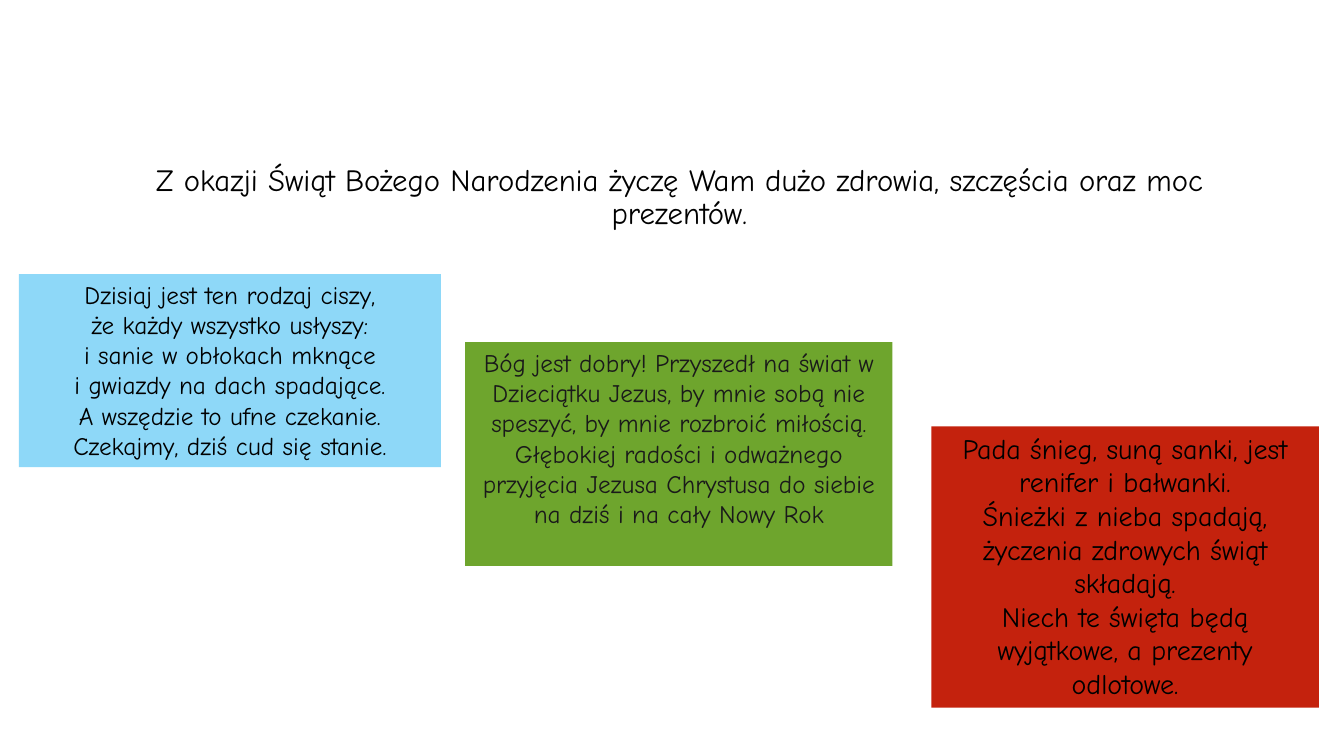
from pptx import Presentation
from pptx.dml.color import RGBColor
from pptx.enum.shapes import MSO_SHAPE
from pptx.enum.text import MSO_ANCHOR, MSO_AUTO_SIZE, PP_ALIGN
from pptx.util import Emu, Pt

EMU_PER_PX = 9525
FONT = "Comic Neue"
COLORS = {
    "black": "000000",
    "charcoal": "1A1A1A",
    "sky": "8ED8F8",
    "green": "6EA52D",
    "red": "C4220D",
}
GREETING = "Z okazji Świąt Bożego Narodzenia życzę Wam dużo zdrowia, szczęścia oraz moc prezentów."
SILENCE_POEM = [[
    "Dzisiaj jest ten rodzaj ciszy,",
    "że każdy wszystko usłyszy:",
    "i sanie w obłokach mknące",
    "i gwiazdy na dach spadające.",
    "A wszędzie to ufne czekanie.",
    "Czekajmy, dziś cud się stanie.",
]]
FAITH_WISH = [[
    "Bóg jest dobry! Przyszedł na świat w Dzieciątku Jezus, by mnie sobą nie speszyć, "
    "by mnie rozbroić miłością. Głębokiej radości i odważnego przyjęcia Jezusa Chrystusa "
    "do siebie na dziś i na cały Nowy Rok",
]]
SNOW_POEM = [
    ["Pada śnieg, suną sanki, jest renifer i bałwanki."],
    ["Śnieżki z nieba spadają, życzenia zdrowych świąt składają."],
    ["Niech te święta będą wyjątkowe, a prezenty odlotowe."],
]


def px(value):
    return Emu(value * EMU_PER_PX)


def rgb(name):
    return RGBColor.from_string(COLORS[name])


def write_text(tf, paragraphs, size, color):
    tf.word_wrap = True
    tf.auto_size = MSO_AUTO_SIZE.NONE
    tf.vertical_anchor = MSO_ANCHOR.TOP
    for i, lines in enumerate(paragraphs):
        p = tf.add_paragraph() if i else tf.paragraphs[0]
        p.alignment = PP_ALIGN.CENTER
        for j, line in enumerate(lines):
            if j:
                p.add_line_break()
            r = p.add_run()
            r.text = line
            r.font.name = FONT
            r.font.size = Pt(size)
            r.font.color.rgb = rgb(color)


def place_greeting(s):
    sp = s.shapes.title
    sp.left, sp.top, sp.width, sp.height = map(px, (75, 152, 1144, 101))
    write_text(sp.text_frame, [[GREETING]], 22, "black")
    p = sp.text_frame.paragraphs[0]
    p.line_spacing = 0.9
    p.space_before = Pt(0)


def add_card(s, box, fill, paragraphs, size, color="black"):
    sp = s.shapes.add_shape(MSO_SHAPE.RECTANGLE, *map(px, box))
    sp.shadow.inherit = False
    sp.fill.solid()
    sp.fill.fore_color.rgb = rgb(fill)
    sp.line.fill.background()
    write_text(sp.text_frame, paragraphs, size, color)


def main():
    prs = Presentation()
    prs.slide_width, prs.slide_height = px(1280), px(720)
    s = prs.slides.add_slide(prs.slide_layouts[5])
    place_greeting(s)
    add_card(s, (18, 261, 402, 184), "sky", SILENCE_POEM, 18)
    add_card(s, (443, 326, 407, 213), "green", FAITH_WISH, 18, "charcoal")
    add_card(s, (887, 406, 369, 268), "red", SNOW_POEM, 20)
    prs.save("out.pptx")


if __name__ == "__main__":
    main()
